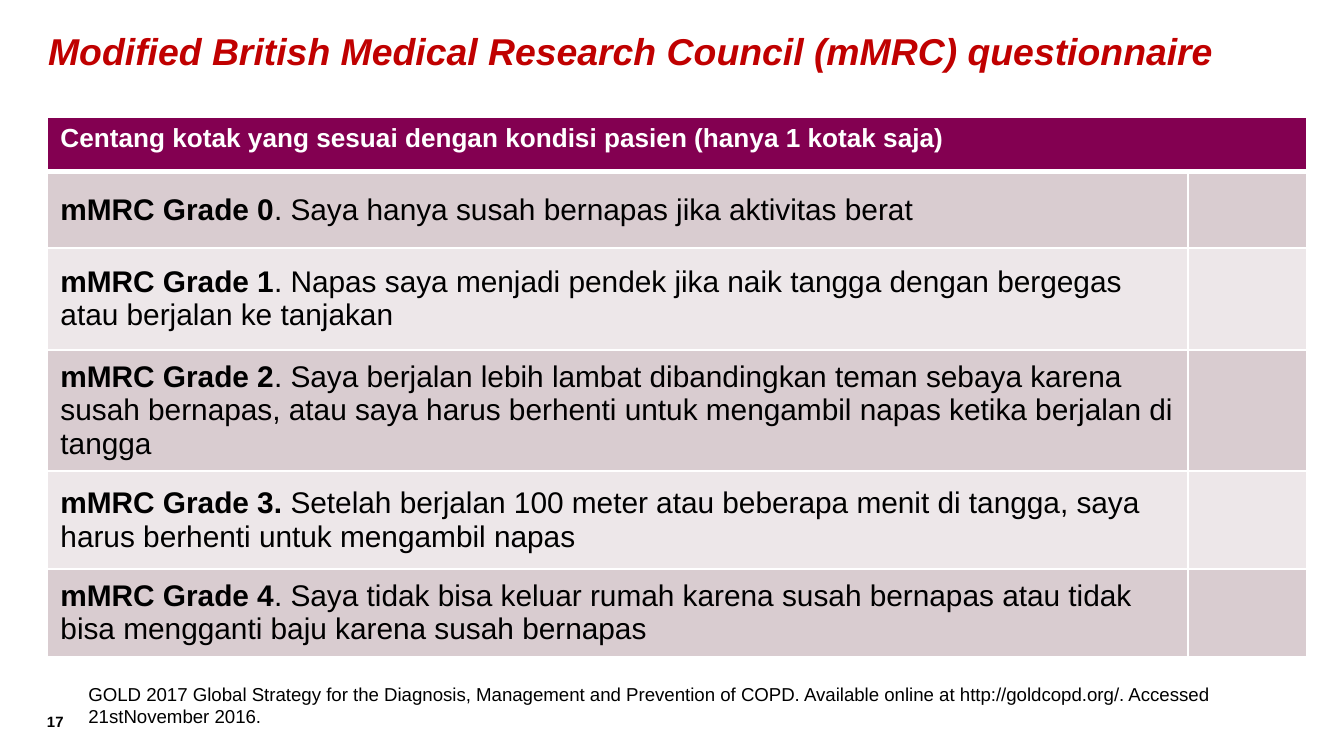
from lxml.etree import SubElement
from pptx import Presentation
from pptx.dml.color import RGBColor
from pptx.enum.text import MSO_ANCHOR
from pptx.oxml.ns import qn
from pptx.util import Pt

TITLE = "Modified British Medical Research Council (mMRC) questionnaire"
HEADER = "Centang kotak yang sesuai dengan kondisi pasien (hanya 1 kotak saja)"
GRADES = [
    ("mMRC Grade 0", ". Saya hanya susah bernapas jika aktivitas berat"),
    ("mMRC Grade 1", ". Napas saya menjadi pendek jika naik tangga dengan bergegas "
     "atau berjalan ke tanjakan"),
    ("mMRC Grade 2", ". Saya berjalan lebih lambat dibandingkan teman sebaya karena "
     "susah bernapas, atau saya harus berhenti untuk mengambil napas ketika "
     "berjalan di tangga"),
    ("mMRC Grade 3. ", "Setelah berjalan 100 meter atau beberapa menit di tangga, saya "
     "harus berhenti untuk mengambil napas"),
    ("mMRC Grade 4", ". Saya tidak bisa keluar rumah karena susah bernapas atau tidak "
     "bisa mengganti baju karena susah bernapas"),
]
SOURCE = ("GOLD 2017 Global Strategy for the Diagnosis, Management and Prevention of COPD. "
          "Available online at http://goldcopd.org/. Accessed 21stNovember 2016.")
PAGE_NUMBER = "17"

COLUMN_WIDTHS = [611.3, 63.4]
ROW_HEIGHTS = [29.3, 41, 54.7, 62.6, 52.6, 46.8]

BLACK = RGBColor(0x00, 0x00, 0x00)
WHITE = RGBColor(0xFF, 0xFF, 0xFF)
RED = RGBColor(0xC0, 0x00, 0x00)
PLUM = RGBColor(0x83, 0x00, 0x51)
BANDS = [RGBColor(0xD9, 0xCC, 0xD0), RGBColor(0xED, 0xE7, 0xE9)]


def add_span(para, text, size, color=BLACK, bold=False, italic=False):
    span = para.add_run()
    span.text = text
    font = span.font
    font.name, font.size = "Arial", Pt(size)
    font.bold, font.italic = bold, italic
    font.color.rgb = color


def add_text(page, text, left, top, width, height, margins=True, **style):
    box = page.shapes.add_textbox(Pt(left), Pt(top), Pt(width), Pt(height))
    frame = box.text_frame
    frame.word_wrap = True
    if not margins:
        frame.margin_left = frame.margin_top = frame.margin_right = frame.margin_bottom = 0
    add_span(frame.paragraphs[0], text, **style)


def paint_cell(cell, fill, bottom=1):
    """Give a cell white borders and a solid fill; borders must precede the fill."""
    properties = cell._tc.get_or_add_tcPr()
    for side, width in (("L", 1), ("R", 1), ("T", 1), ("B", bottom)):
        line = SubElement(properties, qn(f"a:ln{side}"), w=str(Pt(width)))
        solid = SubElement(line, qn("a:solidFill"))
        SubElement(solid, qn("a:srgbClr"), val=str(WHITE))
    cell.fill.solid()
    cell.fill.fore_color.rgb = fill


def add_questionnaire(page, left, top):
    frame = page.shapes.add_table(len(ROW_HEIGHTS), len(COLUMN_WIDTHS), Pt(left), Pt(top),
                                  Pt(sum(COLUMN_WIDTHS)), Pt(sum(ROW_HEIGHTS)))
    table = frame.table
    for column, width in zip(table.columns, COLUMN_WIDTHS):
        column.width = Pt(width)
    for row, height in zip(table.rows, ROW_HEIGHTS):
        row.height = Pt(height)

    for cell in table.rows[0].cells:
        paint_cell(cell, PLUM, bottom=3)
    header = table.cell(0, 0)
    header.merge(table.cell(0, 1))
    add_span(header.text_frame.paragraphs[0], HEADER, size=14, color=WHITE, bold=True)

    for index, (grade, description) in enumerate(GRADES):
        cells = table.rows[index + 1].cells
        for cell in cells:
            paint_cell(cell, BANDS[index % 2])
        statement = cells[0]
        statement.vertical_anchor = MSO_ANCHOR.MIDDLE
        para = statement.text_frame.paragraphs[0]
        add_span(para, grade, size=16, bold=True)
        add_span(para, description, size=16)


def main():
    deck = Presentation()
    deck.slide_width, deck.slide_height = Pt(720), Pt(405)
    page = deck.slides.add_slide(deck.slide_layouts[6])
    add_text(page, TITLE, 18.7, 11.5, 652.3, 39.6, size=20, color=RED, bold=True, italic=True)
    add_text(page, PAGE_NUMBER, 25.2, 381.6, 31, 13, margins=False, size=8, bold=True)
    add_questionnaire(page, 25.2, 62.6)
    add_text(page, SOURCE, 40.3, 362.2, 645.1, 32, size=10)
    deck.save("out.pptx")


if __name__ == "__main__":
    main()
